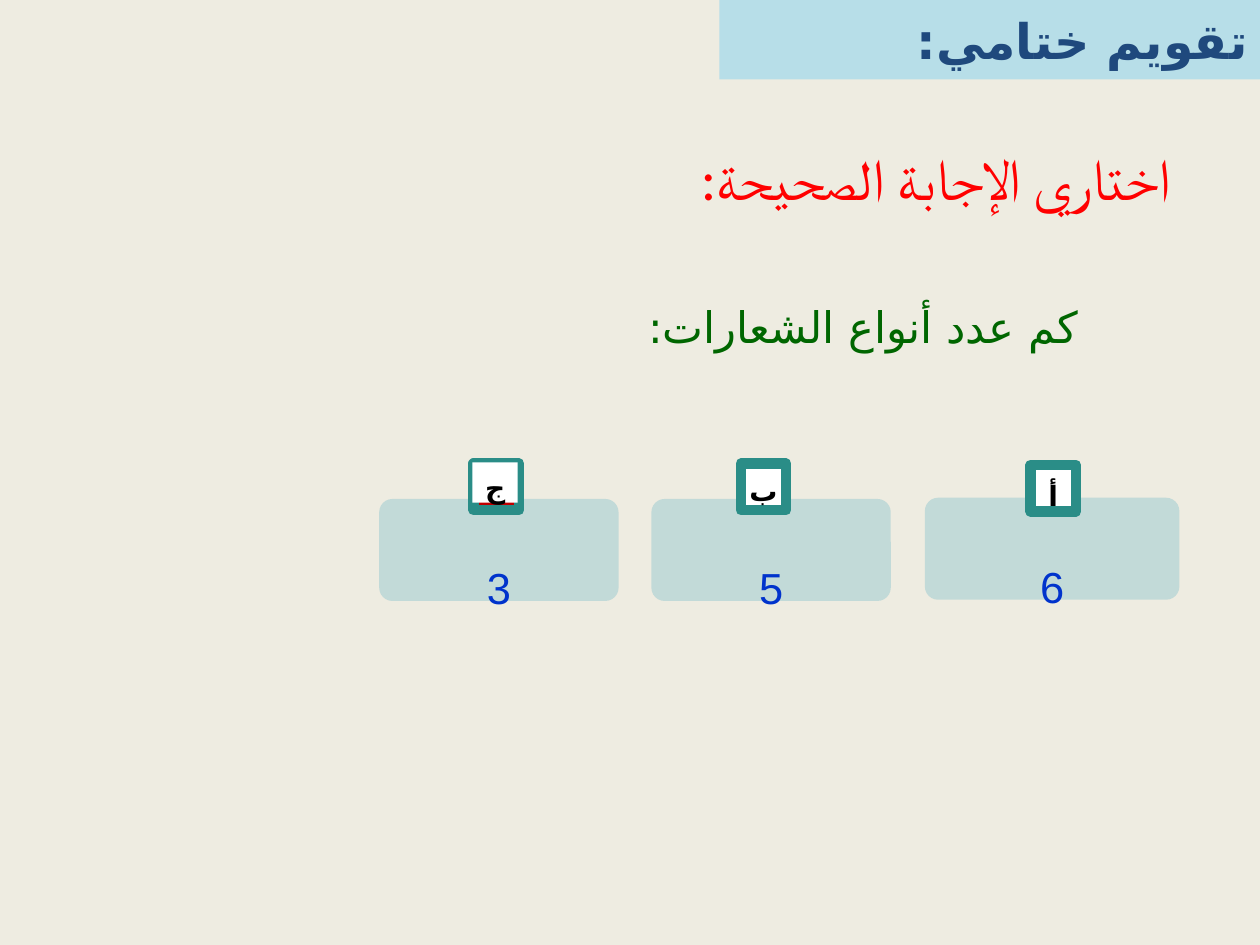
from lxml import etree
from pptx import Presentation
from pptx.dml.color import RGBColor
from pptx.enum.shapes import MSO_SHAPE
from pptx.enum.text import MSO_ANCHOR, MSO_AUTO_SIZE, PP_ALIGN
from pptx.oxml.ns import qn
from pptx.util import Inches, Pt

RECT, ROUNDED = MSO_SHAPE.RECTANGLE, MSO_SHAPE.ROUNDED_RECTANGLE
TOP, MIDDLE = MSO_ANCHOR.TOP, MSO_ANCHOR.MIDDLE
RIGHT, CENTER = PP_ALIGN.RIGHT, PP_ALIGN.CENTER
GROW = MSO_AUTO_SIZE.SHAPE_TO_FIT_TEXT
ARABIC_SANS = "DejaVu Sans"

TITLE = "تقويم ختامي:"
INSTRUCTION = "اختاري الإجابة الصحيحة:"
QUESTION = "كم عدد أنواع الشعارات:"
ANSWERS = [
    dict(value="6", letter="أ", card=(7.34, 3.95, 2.02, 0.81),
         badge=(8.18, 3.69), badge_fill="FFFFFF", label=(8.18, 3.73), label_fill=None),
    dict(value="5", letter="ب", card=(5.17, 3.96, 1.9, 0.81),
         badge=(5.88, 3.68), badge_fill="FFFFFF", label=(5.88, 3.69), label_fill=None),
    dict(value="3", letter="ج", card=(3.01, 3.96, 1.9, 0.81),
         badge=(3.76, 3.68), badge_fill="C00000", label=(3.75, 3.67), label_fill="FFFFFF"),
]
BADGE_SIZE = (0.36, 0.37)
LABEL_SIZE = (0.36, 0.32)


def rgb(color):
    return RGBColor.from_string(color)


def add_box(s, kind, box, fill):
    sp = s.shapes.add_shape(kind, *map(Inches, box))
    sp.shadow.inherit = False
    sp.fill.solid()
    sp.fill.fore_color.rgb = rgb(fill)
    sp.line.fill.background()
    return sp


def add_text_box(s, box):
    sp = s.shapes.add_textbox(*map(Inches, box))
    sp.text_frame.auto_size = GROW
    return sp


def set_text(sp, text, size, font, script_font, color, align,
             bold=False, spacing=None, anchor=TOP):
    tf = sp.text_frame
    tf.word_wrap = True
    tf.vertical_anchor = anchor
    p = tf.paragraphs[0]
    p.alignment = align
    p.line_spacing = spacing
    p._p.get_or_add_pPr().set("rtl", "1")
    r = p.add_run()
    r.text = text
    r.font.size = Pt(size)
    r.font.name = font
    r.font.bold = bold
    r.font.color.rgb = rgb(color)
    etree.SubElement(r._r.get_or_add_rPr(), qn("a:cs"), typeface=script_font)


def clear_insets(sp):
    tf = sp.text_frame
    tf.margin_left = tf.margin_right = tf.margin_top = tf.margin_bottom = 0


def add_answer(s, answer):
    card = add_box(s, ROUNDED, answer["card"], "A1CCD1")
    card.adjustments[0] = 0.13
    color = card.fill._xPr.find(".//" + qn("a:srgbClr"))
    etree.SubElement(color, qn("a:alpha"), val="56000")
    set_text(card, answer["value"], 24.8, "Calibri", "Arial", "0033CC", CENTER, spacing=2.0)

    badge = add_box(s, RECT, answer["badge"] + BADGE_SIZE, answer["badge_fill"])
    badge.line.color.rgb = rgb("2A8D87")
    badge.line.width = Pt(6)
    etree.SubElement(badge.line._get_or_add_ln(), qn("a:round"))

    label = add_text_box(s, answer["label"] + LABEL_SIZE)
    if answer["label_fill"]:
        label.fill.solid()
        label.fill.fore_color.rgb = rgb(answer["label_fill"])
    clear_insets(label)
    set_text(label, answer["letter"], 16, "Lato", ARABIC_SANS, "000000", CENTER,
             bold=True, spacing=Pt(23.9))


def main():
    prs = Presentation()
    prs.slide_width, prs.slide_height = Inches(10), Inches(7.5)
    s = prs.slides.add_slide(prs.slide_layouts[6])
    s.background.fill.solid()
    s.background.fill.fore_color.rgb = rgb("EEECE1")

    instruction = add_text_box(s, (4.68, 1.35, 4.6, 0.39))
    clear_insets(instruction)
    set_text(instruction, INSTRUCTION, 33, "Calibri", "Calibri", "FF0000", RIGHT,
             spacing=Pt(24.1))

    question = add_text_box(s, (0.69, 2.33, 7.97, 0.52))
    set_text(question, QUESTION, 24.8, "Lato", ARABIC_SANS, "006600", RIGHT)

    for answer in ANSWERS:
        add_answer(s, answer)

    title = add_box(s, RECT, (5.71, 0, 4.29, 0.63), "B7DEE8")
    set_text(title, TITLE, 28, "Arial", ARABIC_SANS, "1F497D", RIGHT, bold=True, anchor=MIDDLE)
    prs.save("out.pptx")


if __name__ == "__main__":
    main()
